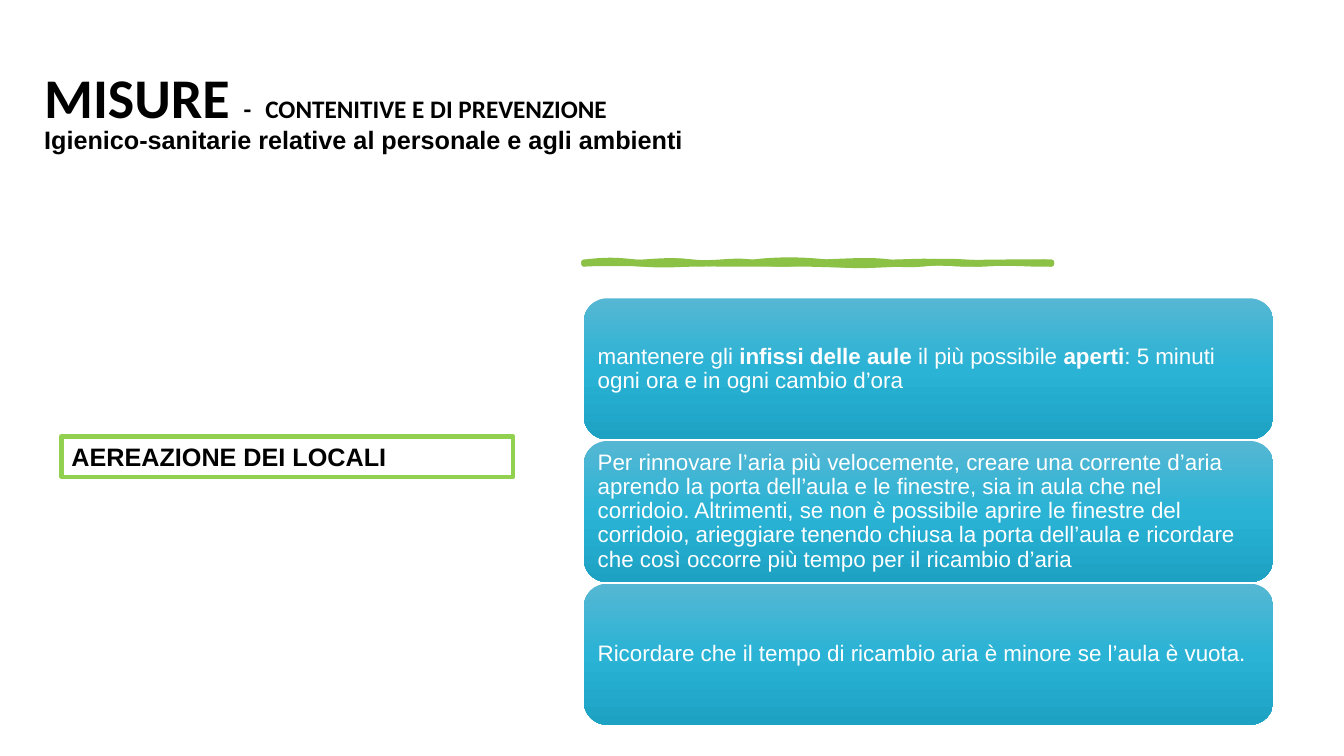
"""Build the slide on airing classrooms as a prevention measure."""
from copy import deepcopy
from dataclasses import dataclass
from itertools import chain

from lxml.etree import SubElement
from pptx import Presentation
from pptx.dml.color import RGBColor
from pptx.dml.line import LineFormat
from pptx.enum.shapes import MSO_SHAPE
from pptx.enum.text import MSO_ANCHOR, MSO_AUTO_SIZE, PP_ALIGN
from pptx.oxml.ns import qn
from pptx.shapes.autoshape import Shape
from pptx.slide import Slide
from pptx.text.text import TextFrame
from pptx.util import Inches, Pt


@dataclass(frozen=True)
class Theme:
    """Colours, fonts and type sizes of the slide."""

    ink: str = "000000"
    card_text: str = "FFFFFF"
    wave: str = "8BC145"
    label_border: str = "92D050"
    card_gradient: tuple[str, ...] = ("55B7D3", "2AB3D5", "1DA2C4")
    heading_font: str = "Calibri"
    body_font: str = "Arial"
    heading_size: int = 40
    space_size: int = 44
    text_size: int = 18
    card_size: int = 16


@dataclass(frozen=True)
class Span:
    """A piece of text with its own weight or size."""

    text: str
    bold: bool | None = None
    size: int | None = None


@dataclass(frozen=True)
class Line:
    """A paragraph and the font its spans share."""

    spans: tuple[Span, ...]
    font: str
    color: str
    size: int | None = None
    bold: bool | None = None
    spacing: float = 1.0


@dataclass(frozen=True)
class Box:
    """A rectangle on the slide, in inches."""

    left: float
    top: float
    width: float
    height: float

    def lengths(self) -> tuple[int, int, int, int]:
        """Return the place and size as slide lengths."""
        return (Inches(self.left), Inches(self.top),
                Inches(self.width), Inches(self.height))


Point = tuple[float, float]
Curve = tuple[float, ...]

THEME = Theme()
TITLE_BOX = Box(0.34, 0.62, 11.96, 1.23)
LABEL_BOX = Box(0.61, 4.33, 4.48, 0.4)
FIRST_CARD = Box(5.79, 2.96, 6.84, 1.4)
CARD_STEP = 1.415

CARDS: tuple[tuple[Span, ...], ...] = (
    (Span("mantenere gli "), Span("infissi delle aule ", True),
     Span("il più possibile "), Span("aperti", True),
     Span(": 5 minuti ogni ora e in ogni cambio d’ora")),
    (Span("Per rinnovare l’aria più velocemente, creare una corrente d’aria "
          "aprendo la porta dell’aula e le finestre, sia in aula che nel "
          "corridoio. Altrimenti, se non è possibile aprire le finestre del "
          "corridoio, arieggiare tenendo chiusa la porta dell’aula e ricordare "
          "che così occorre più tempo per il ricambio d’aria"),),
    (Span("Ricordare che il tempo di ricambio aria è minore se l’aula è vuota."),),
)

WAVE_START: Point = (5.79, 2.6)
WAVE_OUTLINES: tuple[tuple[Curve, ...], ...] = (
    ((6.03, 2.57, 6.13, 2.58, 6.32, 2.6), (6.51, 2.62, 6.7, 2.57, 6.84, 2.6),
     (6.98, 2.62, 7.22, 2.62, 7.46, 2.6), (7.7, 2.57, 7.95, 2.57, 8.21, 2.6),
     (8.48, 2.63, 8.59, 2.59, 8.78, 2.6), (8.98, 2.6, 9.18, 2.58, 9.35, 2.6),
     (9.53, 2.61, 10.15, 2.59, 10.43, 2.6), (10.44, 2.61, 10.43, 2.61, 10.43, 2.62),
     (10.23, 2.63, 10.07, 2.6, 9.73, 2.62), (9.38, 2.63, 9.42, 2.59, 9.16, 2.62),
     (8.89, 2.64, 8.82, 2.6, 8.58, 2.62), (8.35, 2.64, 8.18, 2.62, 7.88, 2.62),
     (7.57, 2.62, 7.5, 2.62, 7.12, 2.62), (6.74, 2.61, 6.75, 2.61, 6.6, 2.62),
     (6.44, 2.62, 5.99, 2.61, 5.79, 2.62), (5.79, 2.61, 5.79, 2.6, 5.79, 2.6)),
    ((5.95, 2.62, 6.09, 2.61, 6.36, 2.6), (6.64, 2.58, 6.68, 2.58, 6.89, 2.6),
     (7.09, 2.62, 7.27, 2.57, 7.46, 2.6), (7.64, 2.62, 7.86, 2.6, 8.12, 2.6),
     (8.38, 2.59, 8.66, 2.57, 8.83, 2.6), (9, 2.63, 9.22, 2.57, 9.59, 2.6),
     (9.95, 2.62, 10.19, 2.6, 10.43, 2.6), (10.43, 2.6, 10.43, 2.61, 10.43, 2.62),
     (10.19, 2.59, 9.99, 2.61, 9.73, 2.62), (9.46, 2.62, 9.3, 2.6, 8.97, 2.62),
     (8.64, 2.63, 8.56, 2.65, 8.21, 2.62), (7.87, 2.59, 7.94, 2.63, 7.69, 2.62),
     (7.44, 2.6, 7.26, 2.61, 6.98, 2.62), (6.7, 2.62, 6.64, 2.64, 6.36, 2.62),
     (6.08, 2.6, 5.93, 2.6, 5.79, 2.62), (5.79, 2.61, 5.79, 2.61, 5.79, 2.6)),
)


def write_lines(frame: TextFrame, lines: tuple[Line, ...], inset: float,
                anchor: MSO_ANCHOR = MSO_ANCHOR.MIDDLE) -> None:
    """Fill a text frame with left-aligned paragraphs."""
    frame.word_wrap = True
    frame.vertical_anchor = anchor
    frame.margin_left = frame.margin_right = Inches(inset)
    for index, line in enumerate(lines):
        paragraph = frame.add_paragraph() if index else frame.paragraphs[0]
        paragraph.alignment = PP_ALIGN.LEFT
        paragraph.line_spacing = line.spacing
        paragraph.font.name = line.font
        paragraph.font.color.rgb = RGBColor.from_string(line.color)
        paragraph.font.bold = line.bold
        if line.size:
            paragraph.font.size = Pt(line.size)
        for span in line.spans:
            run = paragraph.add_run()
            run.text = span.text
            run.font.bold = span.bold
            if span.size:
                run.font.size = Pt(span.size)


def set_round_line(line: LineFormat, color: str, width: float) -> None:
    """Give an outline its colour, width and round joins."""
    line.color.rgb = RGBColor.from_string(color)
    line.width = Pt(width)
    SubElement(line.fill._xPr, qn("a:round"))


def set_gradient(shape: Shape, colors: tuple[str, ...]) -> None:
    """Fill a shape from top to bottom with evenly spaced colours."""
    shape.fill.gradient()
    shape.fill.gradient_angle = 270
    stop_list = shape._element.spPr.find(".//" + qn("a:gsLst"))
    while len(stop_list) < len(colors):
        stop_list.append(deepcopy(stop_list[0]))
    for index, (stop, color) in enumerate(zip(shape.fill.gradient_stops, colors)):
        stop.position = index / (len(colors) - 1)
        stop.color.rgb = RGBColor.from_string(color)


def bend_segments(shape: Shape, curves: tuple[Curve, ...]) -> None:
    """Turn the straight segments of a freeform into cubic curves."""
    segments = list(shape._element.spPr.iter(qn("a:lnTo")))
    for segment, curve in zip(segments, curves):
        for index in (0, 1):
            control = deepcopy(segment[-1])
            control.set("x", str(Inches(curve[2 * index]) - shape.left))
            control.set("y", str(Inches(curve[2 * index + 1]) - shape.top))
            segment.insert(index, control)
        segment.tag = qn("a:cubicBezTo")


def add_wave(slide: Slide) -> None:
    """Draw the hand-drawn rule above the cards."""
    start_x, start_y = (Inches(value) for value in WAVE_START)
    builder = slide.shapes.build_freeform(start_x, start_y)
    for index, curves in enumerate(WAVE_OUTLINES):
        if index:
            builder.move_to(start_x, start_y)
        ends = [(Inches(curve[4]), Inches(curve[5])) for curve in curves]
        builder.add_line_segments(ends, close=True)
    wave = builder.convert_to_shape()
    bend_segments(wave, tuple(chain(*WAVE_OUTLINES)))
    wave.shadow.inherit = False
    wave.fill.solid()
    wave.fill.fore_color.rgb = RGBColor.from_string(THEME.wave)
    set_round_line(wave.line, THEME.wave, 3.5)


def add_label(slide: Slide) -> None:
    """Draw the framed topic label."""
    label = slide.shapes.add_shape(MSO_SHAPE.RECTANGLE, *LABEL_BOX.lengths())
    label.shadow.inherit = False
    label.fill.background()
    set_round_line(label.line, THEME.label_border, 3)
    line = Line((Span("AEREAZIONE DEI LOCALI"),), THEME.body_font, THEME.ink,
                THEME.text_size, True)
    write_lines(label.text_frame, (line,), 0.1, MSO_ANCHOR.TOP)
    label.text_frame.auto_size = MSO_AUTO_SIZE.SHAPE_TO_FIT_TEXT


def add_card(slide: Slide, box: Box, spans: tuple[Span, ...]) -> None:
    """Draw one rounded advice card."""
    card = slide.shapes.add_shape(MSO_SHAPE.ROUNDED_RECTANGLE, *box.lengths())
    card.shadow.inherit = False
    card.line.fill.background()
    set_gradient(card, THEME.card_gradient)
    line = Line(spans, THEME.body_font, THEME.card_text, THEME.card_size, spacing=0.9)
    write_lines(card.text_frame, (line,), 0.07)


def add_title(slide: Slide) -> None:
    """Write the two-line title."""
    frame = slide.shapes.add_textbox(*TITLE_BOX.lengths()).text_frame
    space = Span(" ", size=THEME.space_size)
    heading = (Span("MISURE", size=THEME.heading_size), space,
               Span("-", size=THEME.text_size), space,
               Span("CONTENITIVE E DI PREVENZIONE", size=THEME.text_size))
    subtitle = (Span("Igienico-sanitarie relative al personale e agli ambienti"),)
    write_lines(frame, (
        Line(heading, THEME.heading_font, THEME.ink, bold=True, spacing=0.8),
        Line(subtitle, THEME.body_font, THEME.ink, THEME.text_size, True, 0.8),
    ), 0.1)
    frame.margin_bottom = Inches(0.28)


def main() -> None:
    """Create and save the presentation."""
    presentation = Presentation()
    presentation.slide_width, presentation.slide_height = Inches(13.33), Inches(7.5)
    slide = presentation.slides.add_slide(presentation.slide_layouts[6])
    add_wave(slide)
    add_label(slide)
    for index, spans in enumerate(CARDS):
        top = FIRST_CARD.top + index * CARD_STEP
        add_card(slide, Box(FIRST_CARD.left, top, FIRST_CARD.width, FIRST_CARD.height), spans)
    add_title(slide)
    presentation.save("out.pptx")


if __name__ == "__main__":
    main()
